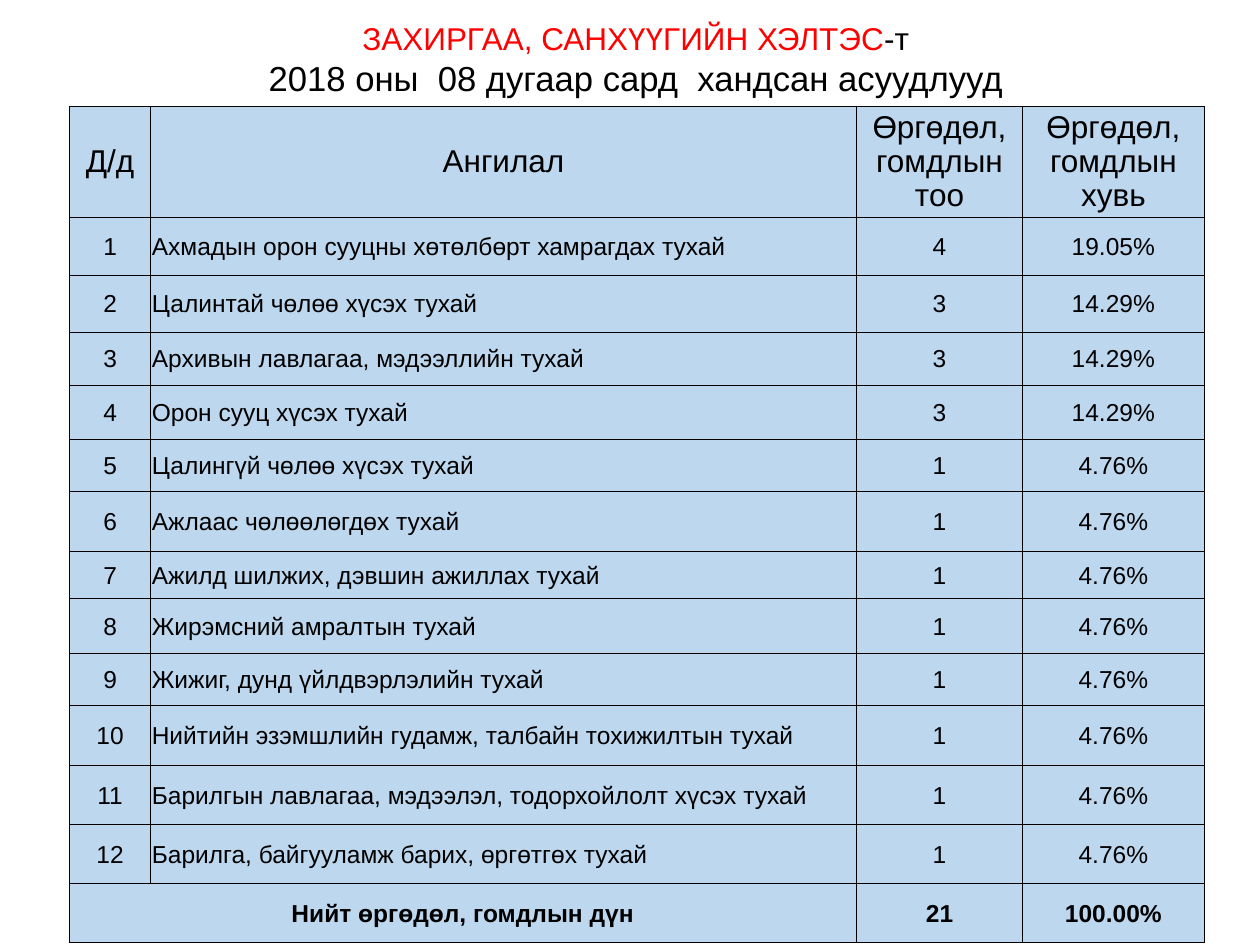
from lxml import etree
from pptx import Presentation
from pptx import util as u
from pptx.dml.color import RGBColor
from pptx.enum import text
from pptx.oxml import ns

FONT = "Arial"
BLACK, RED, BLUE = "000000", "FF0000", "BDD7EE"
HEADERS = ["Д/д", "Ангилал", "Өргөдөл, гомдлын тоо", "Өргөдөл, гомдлын хувь"]
TOPICS = [
    ("Ахмадын орон сууцны хөтөлбөрт хамрагдах тухай", "4", "19.05%"),
    ("Цалинтай чөлөө хүсэх тухай", "3", "14.29%"),
    ("Архивын лавлагаа, мэдээллийн тухай", "3", "14.29%"),
    ("Орон сууц хүсэх тухай", "3", "14.29%"),
    ("Цалингүй чөлөө хүсэх тухай", "1", "4.76%"),
    ("Ажлаас чөлөөлөгдөх тухай", "1", "4.76%"),
    ("Ажилд шилжих, дэвшин ажиллах тухай", "1", "4.76%"),
    ("Жирэмсний амралтын тухай", "1", "4.76%"),
    ("Жижиг, дунд үйлдвэрлэлийн тухай", "1", "4.76%"),
    ("Нийтийн эзэмшлийн гудамж, талбайн тохижилтын тухай", "1", "4.76%"),
    ("Барилгын лавлагаа, мэдээлэл, тодорхойлолт хүсэх тухай", "1", "4.76%"),
    ("Барилга, байгууламж барих, өргөтгөх тухай", "1", "4.76%"),
]
TOTAL = ["Нийт өргөдөл, гомдлын дүн", "", "21", "100.00%"]
COL_WIDTHS = [1.64, 14.22, 3.36, 3.65]
ROW_HEIGHTS = [2.16, 1.17, 1.15, 1.07, 1.09, 1.05, 1.21,
               0.95, 1.11, 1.05, 1.21, 1.19, 1.19, 1.19]


def rgb(color):
    """Turn a hex string into a colour."""
    return RGBColor.from_string(color)


def set_font(font, size, color=BLACK, bold=False):
    """Set the common font properties."""
    font.name, font.size, font.bold = FONT, u.Pt(size), bold
    font.color.rgb = rgb(color)


def add_title(s):
    """Add the two centred title lines."""
    sp = s.shapes.add_textbox(u.Cm(2.06), u.Cm(0.35), u.Cm(21.51), u.Cm(1.65))
    tf = sp.text_frame
    tf.word_wrap = True
    tf.vertical_anchor = text.MSO_ANCHOR.MIDDLE
    tf.margin_top = tf.margin_bottom = 0
    lines = [
        (18, [("ЗАХИРГАА, САНХҮҮГИЙН ХЭЛТЭС", RED), ("-т", BLACK)]),
        (19.8, [("2018 оны  08 дугаар сард  хандсан асуудлууд", BLACK)]),
    ]
    for i, (size, runs) in enumerate(lines):
        p = tf.add_paragraph() if i else tf.paragraphs[0]
        p.alignment = text.PP_ALIGN.CENTER
        for words, color in runs:
            r = p.add_run()
            r.text = words
            set_font(r.font, size, color)


def set_borders(cell, color=BLACK, width=0.5):
    """Draw the four cell borders."""
    tc_pr = cell._tc.get_or_add_tcPr()
    for i, side in enumerate(("a:lnL", "a:lnR", "a:lnT", "a:lnB")):
        ln = etree.Element(ns.qn(side), w=str(u.Pt(width)))
        fill = etree.SubElement(ln, ns.qn("a:solidFill"))
        etree.SubElement(fill, ns.qn("a:srgbClr"), val=color)
        tc_pr.insert(i, ln)


def fill_cell(cell, words, size, bold=False, centred=True):
    """Write and style one table cell."""
    cell.fill.solid()
    cell.fill.fore_color.rgb = rgb(BLUE)
    cell.margin_left = cell.margin_right = cell.margin_top = u.Cm(0.02)
    cell.margin_bottom = 0
    cell.vertical_anchor = text.MSO_ANCHOR.MIDDLE
    cell.text = words
    p = cell.text_frame.paragraphs[0]
    p.alignment = text.PP_ALIGN.CENTER if centred else text.PP_ALIGN.LEFT
    set_font(p.font, size, bold=bold)
    if size == 18:
        p.line_spacing = 0.97
    set_borders(cell)


def add_topic_table(s):
    """Add the table of topics with its header and total rows."""
    topics = [[str(i), *topic] for i, topic in enumerate(TOPICS, 1)]
    rows = [HEADERS, *topics, TOTAL]
    last = len(rows) - 1
    table = s.shapes.add_table(
        len(rows), len(HEADERS), u.Cm(1.4), u.Cm(2.14),
        u.Cm(sum(COL_WIDTHS)), u.Cm(sum(ROW_HEIGHTS))).table
    for column, width in zip(table.columns, COL_WIDTHS):
        column.width = u.Cm(width)
    for row, height in zip(table.rows, ROW_HEIGHTS):
        row.height = u.Cm(height)
    for i, row in enumerate(rows):
        for j, words in enumerate(row):
            fill_cell(table.cell(i, j), words, 14 if i else 18,
                      bold=i == last, centred=j != 1 or i == 0)
    table.cell(last, 0).merge(table.cell(last, 1))


def main():
    """Build and save the slide."""
    prs = Presentation()
    prs.slide_width, prs.slide_height = u.Cm(25.4), u.Cm(19.05)
    s = prs.slides.add_slide(prs.slide_layouts[6])
    add_title(s)
    add_topic_table(s)
    prs.save("out.pptx")


if __name__ == "__main__":
    main()
